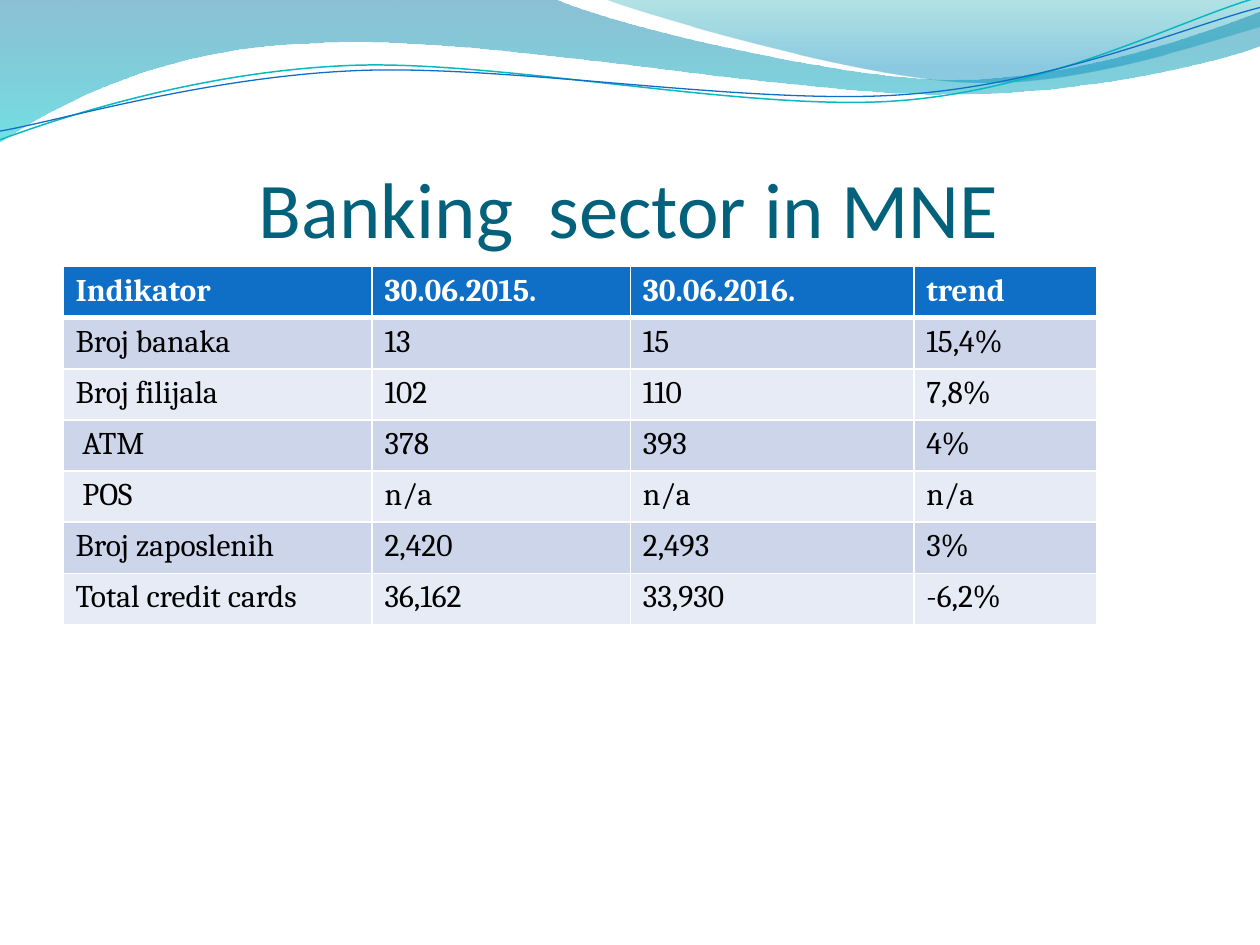
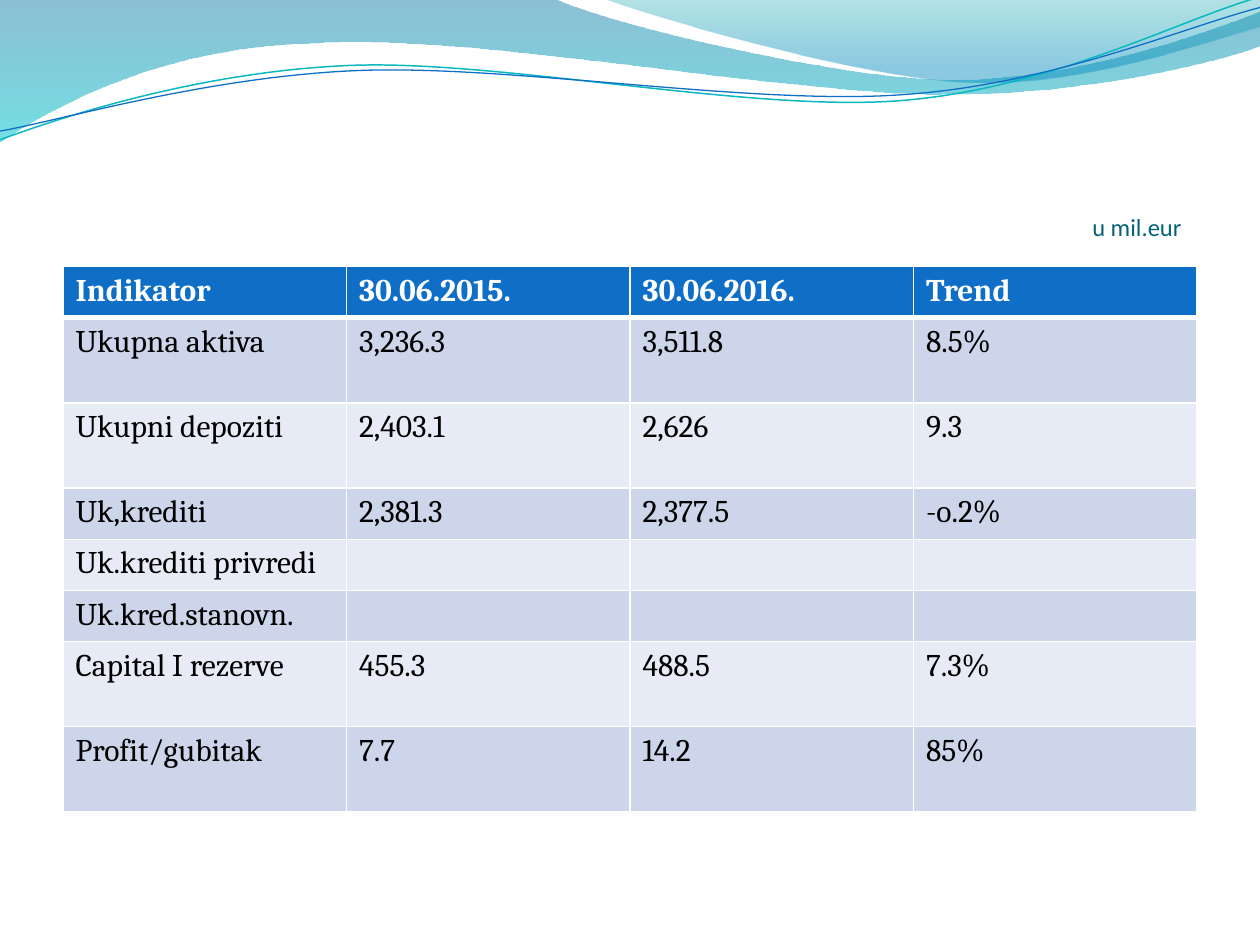
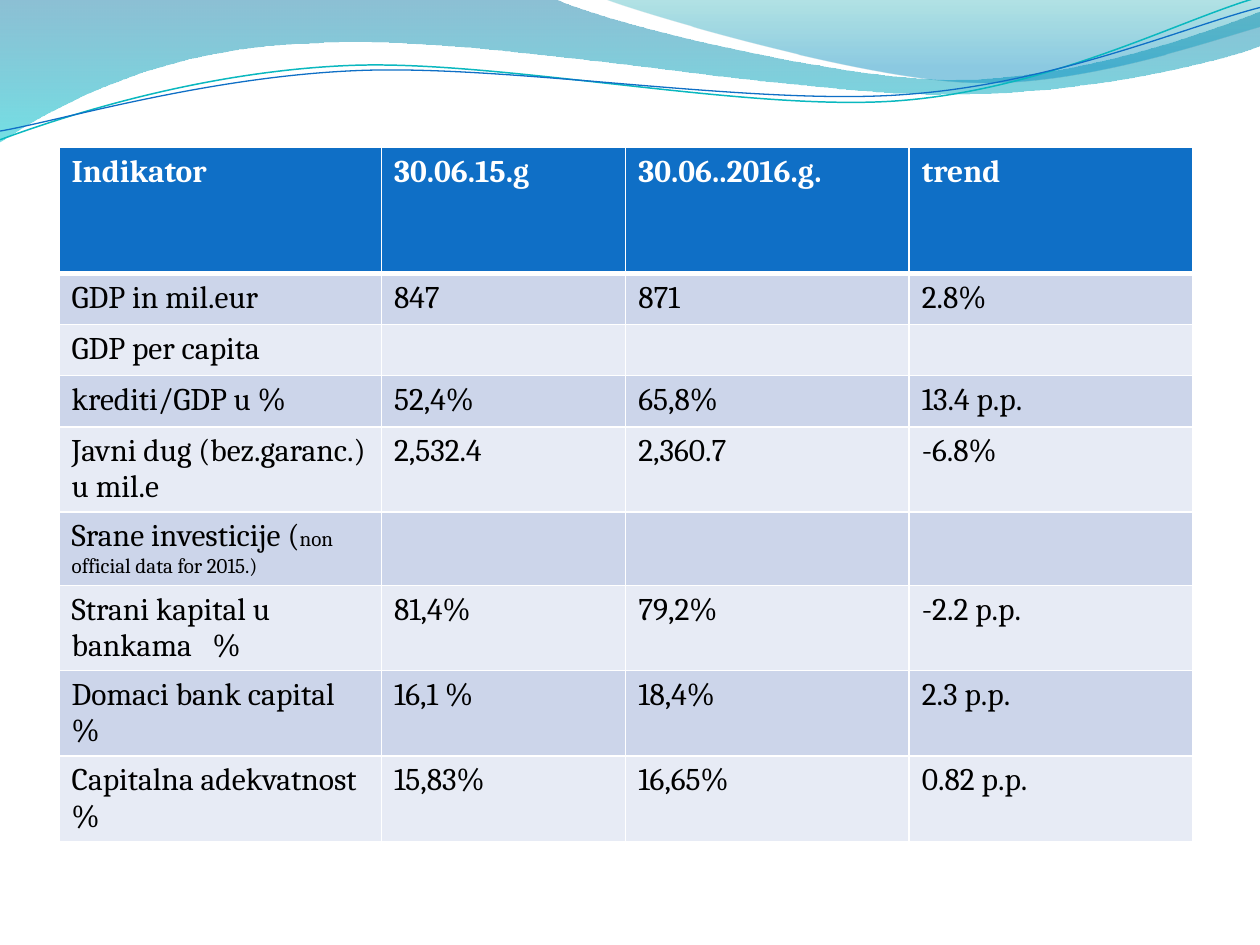
from dataclasses import dataclass

from lxml.etree import SubElement
from pptx import Presentation
from pptx.dml.color import RGBColor
from pptx.enum.text import MSO_ANCHOR, MSO_AUTO_SIZE, PP_ALIGN
from pptx.oxml import parse_xml
from pptx.oxml.ns import nsdecls, qn
from pptx.util import Pt

COLORS = {
    "title": "04617B", "header": "0F6FC6", "odd row": "CCD5EA", "even row": "E7EBF5",
    "white": "FFFFFF", "black": "000000", "deep blue": "0074A1", "turquoise": "00C6CF",
    "sea green": "00A1A9", "sky blue": "008BBF", "cyan line": "0AB8BF", "blue line": "0F6FC6",
}
TITLE_FONT, TABLE_FONT = "Calibri", "Cambria"
TABLE_SIZE, NOTE_SIZE = 18, 12
ONE_LINE, NOTE_LINES, TWO_LINES = 29.2, 41.7, 48.7
UNITS_PER_POINT = 100
LINE_TILT = 357.3
TITLE_ONLY, BLANK = 5, 6


@dataclass
class Stop:
    position: float
    color: str
    opacity: int


@dataclass
class Wave:
    """Start point, then lines (x, y) and cubic curves (three points)."""
    start: tuple
    segments: list
    stops: tuple = ()
    line_color: str = ""
    line_width: float = 0


@dataclass
class Title:
    text: str
    size: float
    indent: float
    bottom: float = 0


@dataclass
class Row:
    cells: list
    height: float = ONE_LINE
    note: str = ""


@dataclass
class TableSlide:
    left: float
    top: float
    widths: list
    rows: list
    title: Title | None = None


WAVES = [
    Wave((0, 0), [
        (316.8, -0.7),
        (342.7, 12.2, 478.1, 45.4, 545.8, 45.4), (614.2, 45.4, 689.8, 18.7, 720, 6.5),
        (720.7, 25.9),
        (707.8, 31.7, 626.4, 54.7, 537.1, 54), (447.8, 54, 275, 20.2, 185, 24.5),
        (92.9, 25.9, 33.1, 59.8, -0.7, 81.4), (0, 0),
    ], stops=(Stop(0, "deep blue", 45), Stop(1, "turquoise", 55))),
    Wave((344.9, -0.7), [
        (366.5, 7.9, 491, 44.6, 553.7, 46.8), (616.3, 49.7, 691.9, 23, 720, 15.1),
        (720, 0), (344.9, -0.7),
    ], stops=(Stop(0, "sea green", 30), Stop(0.8, "sky blue", 45))),
    Wave((-1.4, 62.9), [
        (33.8, 51.7, 114.1, 29.4, 199.8, 29.9), (284.8, 30.3, 425.9, 67.3, 512.5, 64.8),
        (599.1, 62.4, 676.5, 25.7, 720.2, 15.6),
    ], line_color="cyan line", line_width=0.85),
    Wave((-1.1, 57.9), [
        (32.9, 53.7, 118.3, 32.5, 204.1, 33), (290.6, 33.4, 428.9, 63.8, 515.5, 61.4),
        (601.4, 59.6, 678.5, 30.1, 721.4, 21.3),
    ], line_color="blue line", line_width=0.75),
]

SLIDES = [
    TableSlide(36, 152.4, [176.6, 147.6, 162, 104.4], [
        Row(["Indikator", "30.06.2015.", "30.06.2016.", "trend"]),
        Row(["Broj banaka", "13", "15", "15,4%"]),
        Row(["Broj filijala", "102", "110", "7,8%"]),
        Row([" ATM", "378", "393", "4%"]),
        Row([" POS", "n/a", "n/a", "n/a"]),
        Row(["Broj zaposlenih", "2,420", "2,493", "3%"]),
        Row(["Total credit cards", "36,162", "33,930", "-6,2%"]),
    ], Title("Banking  sector in MNE", 45, indent=112)),
    TableSlide(36, 152.4, [162] * 4, [
        Row(["Indikator", "30.06.2015.", "30.06.2016.", "Trend"]),
        Row(["Ukupna aktiva", "3,236.3", "3,511.8", "8.5%"], TWO_LINES),
        Row(["Ukupni depoziti", "2,403.1", "2,626", "9.3"], TWO_LINES),
        Row(["Uk,krediti", "2,381.3", "2,377.5", "-o.2%"]),
        Row(["Uk.krediti privredi", "", "", ""]),
        Row(["Uk.kred.stanovn.", "", "", ""]),
        Row(["Capital I rezerve", "455.3", "488.5", "7.3%"], TWO_LINES),
        Row(["Profit/gubitak", "7.7", "14.2", "85%"], TWO_LINES),
    ], Title("u mil.eur", 14, indent=588.2, bottom=7.3)),
    TableSlide(33.8, 84.3, [184.2, 139.6, 162, 162], [
        Row(["Indikator", "30.06.15.g", "30.06..2016.g.", "trend"], 72),
        Row(["GDP in mil.eur", "847", "871", "2.8%"]),
        Row(["GDP per capita", "", "", ""]),
        Row(["krediti/GDP u %", "52,4%", "65,8%", "13.4 p.p."]),
        Row(["Javni dug (bez.garanc.) u mil.e", "2,532.4", "2,360.7", "-6.8%"], TWO_LINES),
        Row(["Srane investicije (", "", "", ""], NOTE_LINES, "non official data for 2015.)"),
        Row(["Strani kapital u bankama   %", "81,4%", "79,2%", "-2.2 p.p."], TWO_LINES),
        Row(["Domaci bank capital  %", "16,1 %", "18,4%", "2.3 p.p."], TWO_LINES),
        Row(["Capitalna adekvatnost %", "15,83%", "16,65%", "0.82 p.p."], TWO_LINES),
    ]),
]


def rgb(name: str) -> RGBColor:
    return RGBColor.from_string(COLORS[name])


def apply_format(target, values: dict) -> None:
    for name, value in values.items():
        setattr(target, name, value)


def add_run(paragraph, text: str, font: str, size: float, color: str, bold: bool = False) -> None:
    run = paragraph.add_run()
    run.text = text
    apply_format(run.font, {"name": font, "size": Pt(size), "bold": bold})
    run.font.color.rgb = rgb(color)


# Waves shared by all slides
def to_units(numbers: tuple) -> list:
    return [round(number * UNITS_PER_POINT) for number in numbers]


def bend_lines(shape, wave: Wave) -> None:
    """Turn the straight steps of the outline into cubic curves."""
    outline = next(shape.element.iter(qn("a:path")))
    first = outline.find(qn("a:moveTo"))[0]
    start_x, start_y = to_units(wave.start)
    offset_x, offset_y = start_x - int(first.get("x")), start_y - int(first.get("y"))
    for line, segment in zip(outline.findall(qn("a:lnTo")), wave.segments):
        if len(segment) == 2:
            continue
        curve = SubElement(outline, qn("a:cubicBezTo"))
        numbers = to_units(segment)
        for x, y in zip(numbers[::2], numbers[1::2]):
            point = SubElement(curve, qn("a:pt"))
            point.set("x", str(x - offset_x))
            point.set("y", str(y - offset_y))
        outline.replace(line, curve)


def draw_wave(slide, wave: Wave):
    builder = slide.shapes.build_freeform(*to_units(wave.start), scale=Pt(1) / UNITS_PER_POINT)
    ends = [to_units(segment[-2:]) for segment in wave.segments]
    builder.add_line_segments(ends, close=bool(wave.stops))
    shape = builder.convert_to_shape()
    bend_lines(shape, wave)
    shape.shadow.inherit = False
    if wave.stops:
        shape.line.fill.background()
        shape.fill.gradient()
        shape.fill.gradient_angle = 270
        for gradient_stop, stop in zip(shape.fill.gradient_stops, wave.stops):
            gradient_stop.position = stop.position
            gradient_stop.color.rgb = rgb(stop.color)
        for color, stop in zip(list(shape.element.spPr.iter(qn("a:srgbClr"))), wave.stops):
            SubElement(color, qn("a:alpha")).set("val", str(stop.opacity * 1000))
    else:
        shape.rotation = LINE_TILT
        shape.fill.background()
        shape.line.color.rgb = rgb(wave.line_color)
        shape.line.width = Pt(wave.line_width)
    return shape


def move_waves_to_master(slide, master) -> None:
    for index, wave in enumerate(WAVES):
        element = draw_wave(slide, wave).element
        element.nvSpPr.cNvPr.set("id", str(100 + index))
        master.shapes.element.insert(2 + index, element)


# Titles and tables
def fill_title(slide, title: Title) -> None:
    shape = slide.shapes.title
    apply_format(shape, {"left": Pt(36), "top": Pt(55.4), "width": Pt(648), "height": Pt(90)})
    frame = shape.text_frame
    apply_format(frame, {
        "margin_left": Pt(title.indent), "margin_top": Pt(3.6), "margin_right": 0,
        "margin_bottom": Pt(title.bottom), "vertical_anchor": MSO_ANCHOR.BOTTOM,
        "auto_size": MSO_AUTO_SIZE.NONE, "word_wrap": True,
    })
    paragraph = frame.paragraphs[0]
    paragraph.alignment = PP_ALIGN.LEFT
    add_run(paragraph, title.text, TITLE_FONT, title.size, "title")


def set_borders(cell, top: float, bottom: float) -> None:
    properties = cell._tc.get_or_add_tcPr()
    for index, (side, width) in enumerate(zip("LRTB", (1, 1, top, bottom))):
        properties.insert(index, parse_xml(
            f'<a:ln{side} {nsdecls("a")} w="{Pt(width)}"><a:solidFill>'
            f'<a:srgbClr val="{COLORS["white"]}"/></a:solidFill></a:ln{side}>'))


def draw_table(slide, content: TableSlide) -> None:
    rows, widths = content.rows, content.widths
    table = slide.shapes.add_table(
        len(rows), len(widths), Pt(content.left), Pt(content.top),
        Pt(sum(widths)), Pt(sum(row.height for row in rows))).table
    for column, width in zip(table.columns, widths):
        column.width = Pt(width)
    for row_index, row in enumerate(rows):
        table.rows[row_index].height = Pt(row.height)
        is_header = row_index == 0
        fill = "header" if is_header else "odd row" if row_index % 2 else "even row"
        color = "white" if is_header else "black"
        for column_index, text in enumerate(row.cells):
            cell = table.cell(row_index, column_index)
            cell.fill.solid()
            cell.fill.fore_color.rgb = rgb(fill)
            set_borders(cell, top=3 if row_index == 1 else 1, bottom=3 if is_header else 1)
            paragraph = cell.text_frame.paragraphs[0]
            if text:
                add_run(paragraph, text, TABLE_FONT, TABLE_SIZE, color, is_header)
            if row.note and column_index == 0:
                add_run(paragraph, row.note, TABLE_FONT, NOTE_SIZE, color)


def main() -> None:
    presentation = Presentation()
    apply_format(presentation, {"slide_width": Pt(720), "slide_height": Pt(540)})
    for content in SLIDES:
        layout = presentation.slide_layouts[TITLE_ONLY if content.title else BLANK]
        slide = presentation.slides.add_slide(layout)
        if content.title:
            fill_title(slide, content.title)
        draw_table(slide, content)
    move_waves_to_master(presentation.slides[0], presentation.slide_master)
    presentation.save("out.pptx")


if __name__ == "__main__":
    main()
